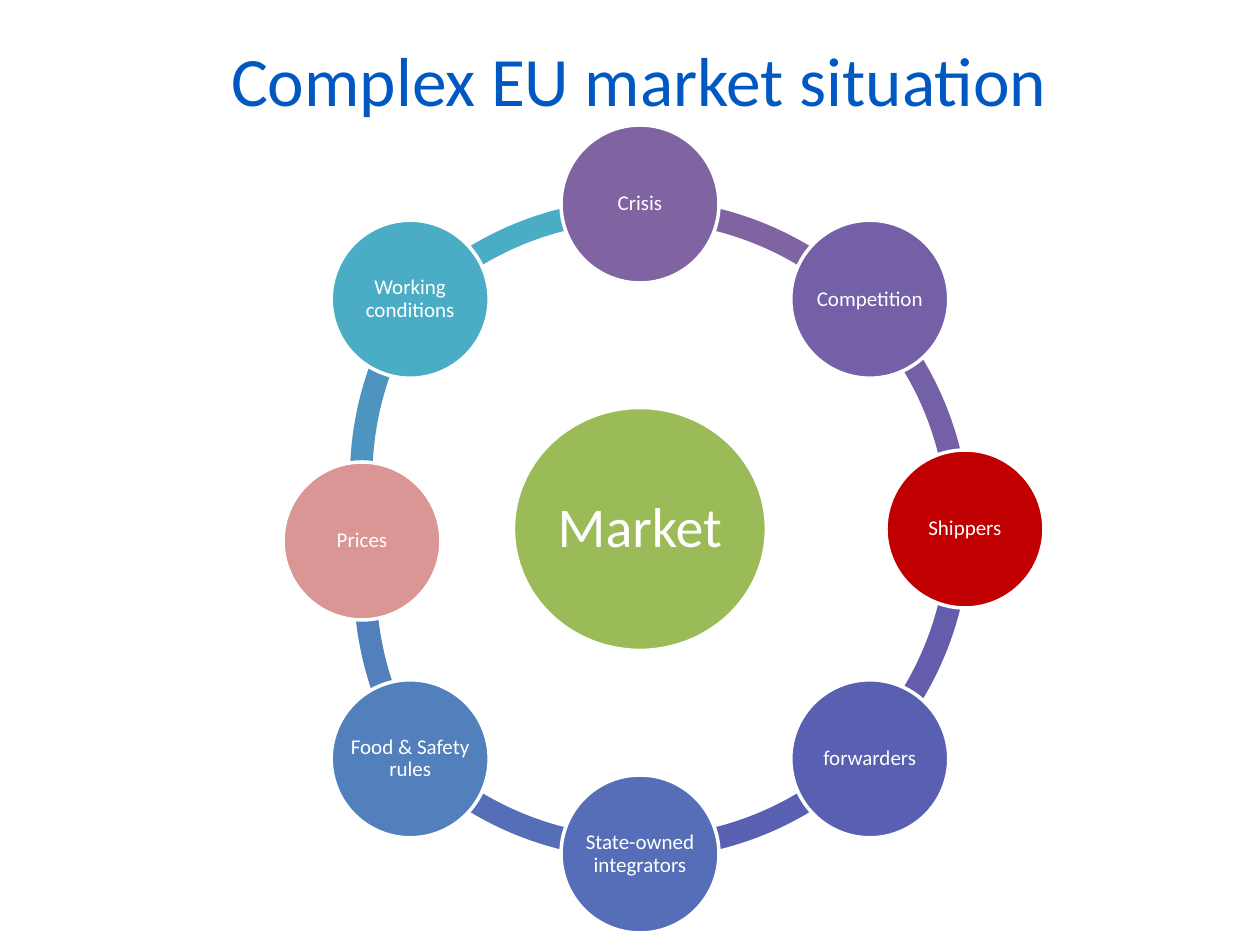
from math import cos, radians, sin

from pptx import Presentation
from pptx.dml.color import RGBColor
from pptx.enum.shapes import MSO_SHAPE as Shape
from pptx.enum.text import MSO_ANCHOR as Anchor, PP_ALIGN as Align
from pptx.util import Emu, Pt

PX = 914400 // 126
NODE = 158
ARC = 660
WHITE = "FFFFFF"

# label, node colour, angle in degrees, offset of the node from the ring
NODES = [
    ("Crisis", "8064A2", 270, (0, 0)),
    ("Competition", "7460A7", 315, (0, 0)),
    ("Shippers", "C00000", 0, (0, 0)),
    ("forwarders", "5960B2", 45, (0, 0)),
    ("State-owned integrators", "556EB7", 90, (0, 0)),
    ("Food & Safety rules", "5280BC", 135, (0, 0)),
    ("Prices", "D99694", 180, (47, 12)),
    ("Working conditions", "4BACC6", 225, (0, 0)),
]
# colour, start and end angle, offset of the arc from the ring centre
ARCS = [
    ("4BACC6", 225, 270, (0, 0)),
    ("4E94C1", 169.07, 213.5, (40, -51)),
    ("5280BC", 147.45, 187.74, (44, 55)),
    ("556EB7", 90, 135, (0, 0)),
    ("5960B2", 45, 90, (0, 0)),
    ("645DAD", 0, 45, (0, 0)),
    ("7460A7", 315, 0, (0, 0)),
    ("8064A2", 270, 315, (0, 0)),
]


def px(*lengths):
    return [Emu(round(length * PX)) for length in lengths]


def color(hex_code):
    return RGBColor.from_string(hex_code)


def write(shape, text, size, ink=WHITE, inset=0, spacing=1.0):
    frame = shape.text_frame
    frame.word_wrap = True
    frame.vertical_anchor = Anchor.MIDDLE
    frame.margin_left = frame.margin_right = px(inset)[0]
    frame.margin_top = frame.margin_bottom = px(inset)[0]
    paragraph = frame.paragraphs[0]
    paragraph.alignment = Align.CENTER
    paragraph.line_spacing = spacing
    run = paragraph.add_run()
    run.text = text
    run.font.name = "Calibri"
    run.font.size = Pt(size)
    run.font.color.rgb = color(ink)


def add_centred(slide, kind, center, width, height, fill):
    x, y = center
    box = px(x - width / 2, y - height / 2, width, height)
    shape = slide.shapes.add_shape(kind, *box)
    shape.shadow.inherit = False
    shape.fill.solid()
    shape.fill.fore_color.rgb = color(fill)
    shape.line.fill.background()
    return shape


def add_arc(slide, center, fill, start, end):
    arc = add_centred(slide, Shape.BLOCK_ARC, center, ARC, ARC, fill)
    # Angles are stored in 60000ths of a degree, adjustments in 100000ths
    for index, value in enumerate((start * 0.6, end * 0.6, 0.034)):
        arc.adjustments[index] = value


def add_disc(slide, center, width, height, fill, label, size):
    disc = add_centred(slide, Shape.OVAL, center, width, height, fill)
    disc.line.color.rgb = color(WHITE)
    disc.line.width = Pt(2)
    # Negative inset lets long labels pass the oval's inscribed text box
    write(disc, label, size, inset=-6, spacing=0.9)


def add_market_ring(slide, left, top, size):
    radius = (size - NODE) / 2
    x, y = left + size / 2, top + size / 2
    for fill, start, end, (dx, dy) in ARCS:
        add_arc(slide, (x + dx, y + dy), fill, start, end)
    add_disc(slide, (x, y), 253, 243, "9BBB59", "Market", 32)
    for label, fill, angle, (dx, dy) in NODES:
        turn = radians(angle)
        center = (x + radius * cos(turn) + dx, y + radius * sin(turn) + dy)
        add_disc(slide, center, NODE, NODE, fill, label, 12)


def add_title(slide, left, top, width, height):
    title = slide.shapes.title
    title.left, title.top, title.width, title.height = px(left, top, width, height)
    write(title, "Complex EU market situation", 39.6, ink="0059C2")


def main():
    deck = Presentation()
    deck.slide_width, deck.slide_height = px(1260, 945)
    slide = deck.slides.add_slide(deck.slide_layouts[5])
    add_title(slide, 143, 37, 992, 83)
    add_market_ring(slide, 236, 125, 808)
    deck.save("out.pptx")


if __name__ == "__main__":
    main()
